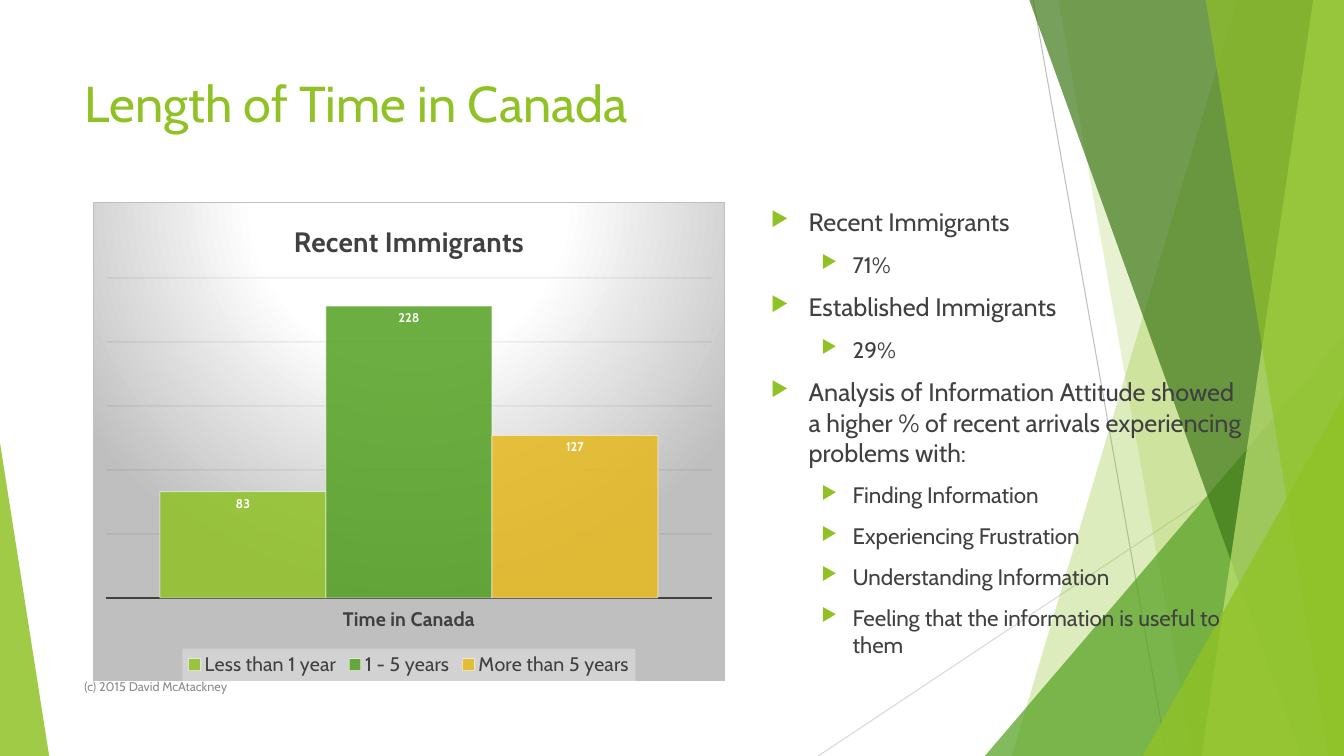
from pptx import Presentation
from pptx.chart.data import CategoryChartData
from pptx.dml.color import RGBColor
from pptx.enum.chart import XL_CHART_TYPE, XL_LABEL_POSITION, XL_LEGEND_POSITION, XL_TICK_LABEL_POSITION, XL_TICK_MARK
from pptx.enum.shapes import MSO_CONNECTOR, MSO_SHAPE
from pptx.enum.text import MSO_ANCHOR
from pptx.oxml import parse_xml
from pptx.oxml.ns import nsdecls, qn
from pptx.util import Cm, Pt

FONT = "Cabin"
GREEN, LEAF, GOLD, DARK = "90C226", "54A021", "E6B91E", "404040"
WIDTH, HEIGHT = 33.87, 19.05


def rgb(color):
    return RGBColor.from_string(color)


def fade(element, alpha):
    for clr in element.iter(qn("a:srgbClr")):
        if len(clr) == 0:
            clr.append(parse_xml(f'<a:alpha {nsdecls("a")} val="{alpha * 1000}"/>'))


def style_font(font, size, color, bold=False):
    font.name, font.size, font.bold = FONT, Pt(size), bold
    font.color.rgb = rgb(color)


def style_line(line, color, width=0.75):
    line.color.rgb = rgb(color)
    line.width = Pt(width)


def add_line(s, x1, y1, x2, y2, color):
    line = s.shapes.add_connector(MSO_CONNECTOR.STRAIGHT, Cm(x1), Cm(y1), Cm(x2), Cm(y2))
    style_line(line.line, color)
    line.element.spPr.append(parse_xml(f'<a:effectLst {nsdecls("a")}/>'))


def paint(sp, color, alpha):
    sp.shadow.inherit = False
    sp.fill.solid()
    sp.fill.fore_color.rgb = rgb(color)
    sp.line.fill.background()
    fade(sp.element.spPr, alpha)


def add_band(s, top_x, bottom_x, color, alpha):
    top = -0.03
    fb = s.shapes.build_freeform(Cm(top_x), Cm(top))
    corners = [(WIDTH, top), (WIDTH, HEIGHT), (bottom_x, HEIGHT)]
    fb.add_line_segments([(Cm(x), Cm(y)) for x, y in corners])
    paint(fb.convert_to_shape(), color, alpha)


def add_triangle(s, x, y, w, color, alpha, apex):
    sp = s.shapes.add_shape(MSO_SHAPE.ISOSCELES_TRIANGLE, Cm(x), Cm(y), Cm(w), Cm(HEIGHT - y))
    sp.adjustments[0] = apex
    paint(sp, color, alpha)


def add_text(s, x, y, w, h, anchor=MSO_ANCHOR.TOP):
    tf = s.shapes.add_textbox(Cm(x), Cm(y), Cm(w), Cm(h)).text_frame
    tf.word_wrap = True
    tf.vertical_anchor = anchor
    return tf


def add_run(p, text, size, color):
    r = p.add_run()
    r.text = text
    style_font(r.font, size, color)


def add_bullets(tf, items):
    for i, (level, text) in enumerate(items):
        p = tf.paragraphs[0] if i == 0 else tf.add_paragraph()
        p.level = level
        p.space_before = Pt(10)
        add_run(p, text, 16 if level else 18, DARK)
        pPr = p._p.get_or_add_pPr()
        left, hang = ((2.06, 0.79) if level else (0.95, 0.95))
        pPr.set("marL", str(Cm(left)))
        pPr.set("indent", str(-Cm(hang)))
        for xml in (
            f'<a:buClr {nsdecls("a")}><a:srgbClr val="{GREEN}"/></a:buClr>',
            f'<a:buSzPct {nsdecls("a")} val="80000"/>',
            f'<a:buChar {nsdecls("a")} char="▶"/>',
        ):
            pPr.append(parse_xml(xml))


def chart_background():
    stops = "".join(
        f'<a:gs pos="{pos * 1000}"><a:srgbClr val="{color}"/></a:gs>'
        for pos, color in [(0, "FFFFFF"), (39, "FFFFFF"), (100, "BFBFBF")]
    )
    return parse_xml(
        f'<c:spPr {nsdecls("c", "a")}><a:gradFill><a:gsLst>{stops}</a:gsLst>'
        '<a:path path="circle"><a:fillToRect l="50000" t="-80000" r="50000" b="180000"/></a:path></a:gradFill>'
        '<a:ln w="9525"><a:solidFill><a:srgbClr val="BFBFBF"/></a:solidFill></a:ln></c:spPr>'
    )


def style_axes(chart):
    axis = chart.category_axis
    axis.major_tick_mark = XL_TICK_MARK.NONE
    axis.tick_label_position = XL_TICK_LABEL_POSITION.LOW
    style_font(axis.tick_labels.font, 14, DARK, True)
    style_line(axis.format.line, DARK, 1.5)
    axis = chart.value_axis
    axis.minimum_scale, axis.maximum_scale, axis.major_unit = 0, 250, 50
    axis.has_major_gridlines = True
    style_line(axis.major_gridlines.format.line, "0D0D0D")
    fade(next(chart.element.iter(qn("c:majorGridlines"))), 10)
    axis.visible = False


def style_series(ser, element, color):
    ser.format.fill.solid()
    ser.format.fill.fore_color.rgb = rgb(color)
    fade(element, 85)
    style_line(ser.format.line, "FFFFFF")
    fade(element, 50)
    labels = ser.data_labels
    labels.show_value = True
    labels.position = XL_LABEL_POSITION.INSIDE_END
    style_font(labels.font, 9, "FFFFFF", True)


def style_legend(chart):
    chart.has_legend = True
    legend = chart.legend
    legend.position = XL_LEGEND_POSITION.BOTTOM
    legend.include_in_layout = False
    style_font(legend.font, 14, DARK)
    panel = parse_xml(
        f'<c:spPr {nsdecls("c", "a")}><a:solidFill><a:srgbClr val="F2F2F2"/></a:solidFill></c:spPr>'
    )
    fade(panel, 39)
    next(chart.element.iter(qn("c:legend"))).find(qn("c:txPr")).addprevious(panel)


def add_column_chart(s, x, y, w, h, title, category, series):
    data = CategoryChartData()
    data.categories = [category]
    for name, value, _ in series:
        data.add_series(name, [value])
    chart = s.shapes.add_chart(XL_CHART_TYPE.COLUMN_CLUSTERED, Cm(x), Cm(y), Cm(w), Cm(h), data).chart
    style_font(chart.font, 10, "000000")
    chart.has_title = True
    p = chart.chart_title.text_frame.paragraphs[0]
    add_run(p, title, 20, DARK)
    p.runs[0].font.bold = True
    plot = chart.plots[0]
    plot.gap_width, plot.overlap, plot.vary_by_categories = 65, 0, False
    for ser, element, (_, _, color) in zip(plot.series, chart.element.iter(qn("c:ser")), series):
        style_series(ser, element, color)
    style_axes(chart)
    style_legend(chart)
    chart.element.find(qn("c:chart")).addnext(chart_background())


def add_backdrop(s):
    add_line(s, 26.04, 0, 29.41, HEIGHT, "BFBFBF")
    add_line(s, WIDTH, 10.24, 20.62, HEIGHT, "D9D9D9")
    add_band(s, 31.19, 25.5, GREEN, 30)
    add_band(s, 26.67, 30.05, GREEN, 20)
    add_triangle(s, 24.82, 8.46, 9.05, LEAF, 72, 1)
    add_band(s, 25.93, 32.79, "3F7819", 70)
    add_band(s, 33.1, 30.28, "C0E474", 70)
    add_band(s, 30.38, 33.48, GREEN, 65)
    add_triangle(s, 28.8, 9.98, 5.07, GREEN, 80, 1)
    add_triangle(s, 0, 11.15, 1.24, GREEN, 85, 0)


def main():
    prs = Presentation()
    prs.slide_width, prs.slide_height = Cm(WIDTH), Cm(HEIGHT)
    s = prs.slides.add_slide(prs.slide_layouts[6])
    add_backdrop(s)
    tf = add_text(s, 1.88, 1.7, 23.88, 3.66)
    add_run(tf.paragraphs[0], "Length of Time in Canada", 36, GREEN)
    add_column_chart(s, 2.34, 5.08, 15.93, 12.09, "Recent Immigrants", "Time in Canada", [
        ("Less than 1 year", 83, GREEN),
        ("1 - 5 years", 228, LEAF),
        ("More than 5 years", 127, GOLD),
    ])
    add_bullets(add_text(s, 19.18, 5.08, 12.37, 12.09), [
        (0, "Recent Immigrants"),
        (1, "71%"),
        (0, "Established Immigrants"),
        (1, "29%"),
        (0, "Analysis of Information Attitude showed a higher % of recent arrivals experiencing problems with:"),
        (1, "Finding Information"),
        (1, "Experiencing Frustration"),
        (1, "Understanding Information"),
        (1, "Feeling that the information is useful to them"),
    ])
    tf = add_text(s, 1.88, 16.79, 17.5, 1.02, MSO_ANCHOR.MIDDLE)
    add_run(tf.paragraphs[0], "(c) 2015 David McAtackney", 9, "8C8C8C")
    prs.save("out.pptx")


if __name__ == "__main__":
    main()
